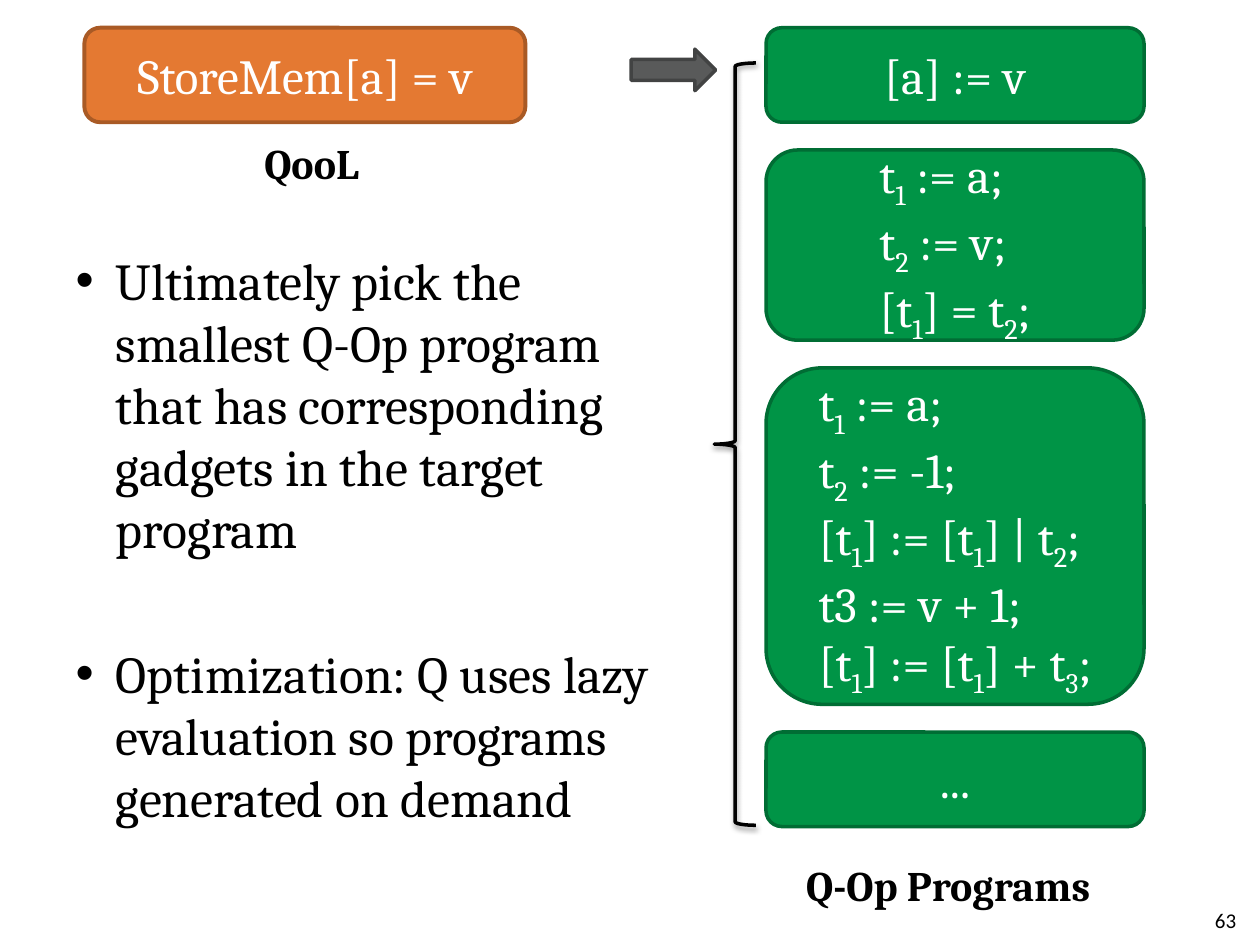
from dataclasses import dataclass

import pptx
import pptx.dml.color
import pptx.enum.shapes
import pptx.enum.text
import pptx.oxml
import pptx.oxml.ns
import pptx.util

Inches, Pt = pptx.util.Inches, pptx.util.Pt
SHAPE = pptx.enum.shapes.MSO_SHAPE
ALIGN = pptx.enum.text.PP_ALIGN
ANCHOR = pptx.enum.text.MSO_ANCHOR
FONT = "Cambria"
TOP, GAP = 0.22, 0.22
COLUMN_LEFT, COLUMN_WIDTH = 6.08, 3

BRACE_SHADOW = (
    f'<a:effectLst {pptx.oxml.ns.nsdecls("a")}>'
    '<a:outerShdw blurRad="40000" dist="20000" dir="5400000" rotWithShape="0">'
    '<a:srgbClr val="000000"><a:alpha val="38000"/></a:srgbClr>'
    "</a:outerShdw></a:effectLst>"
)


@dataclass
class Program:
    height: float
    lines: list[str]


@dataclass
class Label:
    text: str
    left: float
    top: float
    width: float
    height: float
    size: float = 24
    font: str = FONT
    bold: bool = True
    align: ALIGN = ALIGN.LEFT


PROGRAMS = [
    Program(0.75, ["[a] := v"]),
    Program(1.51, ["t_1 := a;", "t_2 := v;", "[t_1] = t_2;"]),
    Program(2.67, ["t_1 := a;", "t_2 := -1;", "[t_1] := [t_1] | t_2;",
                   "t3 := v + 1;", "[t_1] := [t_1] + t_3;"]),
    Program(0.75, ["..."]),
]
LABELS = [
    Label("QooL", 2, 1.04, 1, 0.5),
    Label("Q-Op Programs", 6.3, 6.77, 2.58, 0.5),
    Label("63", 7.58, 7.1, 2.33, 0.4, 12, "Calibri", False, ALIGN.RIGHT),
]
BULLETS = [
    "Ultimately pick the smallest Q-Op program that has corresponding "
    "gadgets in the target program",
    "Optimization: Q uses lazy evaluation so programs generated on demand",
]


def rgb(color: str):
    return pptx.dml.color.RGBColor.from_string(color)


def style_run(r, size: float, color: str, font: str = FONT, bold: bool = False) -> None:
    r.font.size, r.font.name, r.font.bold = Pt(size), font, bold
    r.font.color.rgb = rgb(color)


def add_shape(s, kind, box, line: str, weight: float, fill: str = ""):
    """Add an unshadowed shape, hollow when no fill is given."""
    sp = s.shapes.add_shape(kind, *map(Inches, box))
    sp.shadow.inherit = False
    if fill:
        sp.fill.solid()
        sp.fill.fore_color.rgb = rgb(fill)
    else:
        sp.fill.background()
    sp.line.color.rgb = rgb(line)
    sp.line.width = Pt(weight)
    return sp


def add_code_line(p, code: str) -> None:
    """Write code into a paragraph; the character after each _ is a subscript."""
    head, *tails = code.split("_")
    pieces = [(head, False)]
    for tail in tails:
        pieces += [(tail[0], True), (tail[1:], False)]
    p.alignment = ALIGN.LEFT
    for text, subscript in pieces:
        r = p.add_run()
        r.text = text
        style_run(r, 28, "FFFFFF")
        if subscript:
            r.font._element.set("baseline", "-25000")


def add_program(s, program: Program, top: float) -> None:
    box = (COLUMN_LEFT, top, COLUMN_WIDTH, program.height)
    sp = add_shape(s, SHAPE.ROUNDED_RECTANGLE, box, "006D34", 2, "009446")
    tf = sp.text_frame
    tf.vertical_anchor = ANCHOR.MIDDLE
    tf._txBody.bodyPr.set("anchorCtr", "1")
    for i, code in enumerate(program.lines):
        add_code_line(tf.add_paragraph() if i else tf.paragraphs[0], code)


def add_label(s, label: Label) -> None:
    box = (label.left, label.top, label.width, label.height)
    tf = s.shapes.add_textbox(*map(Inches, box)).text_frame
    tf.word_wrap = label.align == ALIGN.RIGHT
    tf.vertical_anchor = ANCHOR.MIDDLE if tf.word_wrap else ANCHOR.TOP
    tf.text = label.text
    p = tf.paragraphs[0]
    p.alignment = label.align
    style_run(p.runs[0], label.size, "000000", label.font, label.bold)


def fill_body(body) -> None:
    body.left, body.top = Inches(0.5), Inches(1.92)
    body.width, body.height = Inches(4.92), Inches(4.78)
    tf = body.text_frame
    tf.auto_size = pptx.enum.text.MSO_AUTO_SIZE.NONE
    tf.text = "\n".join(BULLETS)
    for p in tf.paragraphs:
        pPr = p._p.get_or_add_pPr()
        pPr.set("marL", str(Inches(0.32)))
        pPr.set("indent", str(Inches(-0.32)))
        style_run(p.runs[0], 29.6, "000000")
    tf.paragraphs[1].space_before = Pt(47)


def main() -> None:
    prs = pptx.Presentation()
    prs.slide_width, prs.slide_height = Inches(10), Inches(7.5)
    s = prs.slides.add_slide(prs.slide_layouts[1])
    title = s.shapes.title._element
    title.getparent().remove(title)
    fill_body(s.placeholders[1])

    store = add_shape(s, SHAPE.ROUNDED_RECTANGLE, (0.67, TOP, 3.5, 0.75),
                      "A95A25", 2.25, "E47932")
    store.text_frame.text = "StoreMem[a] = v"
    p = store.text_frame.paragraphs[0]
    p.alignment = ALIGN.CENTER
    style_run(p.runs[0], 28, "FFFFFF")
    add_shape(s, SHAPE.RIGHT_ARROW, (5.01, 0.39, 0.67, 0.33), "424343", 2, "595A5A")

    top = TOP
    for program in PROGRAMS:
        add_program(s, program, top)
        top += program.height + GAP

    brace = add_shape(s, SHAPE.LEFT_BRACE, (5.67, 0.5, 0.33, 6.05), "000000", 2)
    spPr = brace._element.spPr
    spPr.replace(spPr.find(pptx.oxml.ns.qn("a:effectLst")),
                 pptx.oxml.parse_xml(BRACE_SHADOW))
    for label in LABELS:
        add_label(s, label)
    prs.save("out.pptx")


if __name__ == "__main__":
    main()
